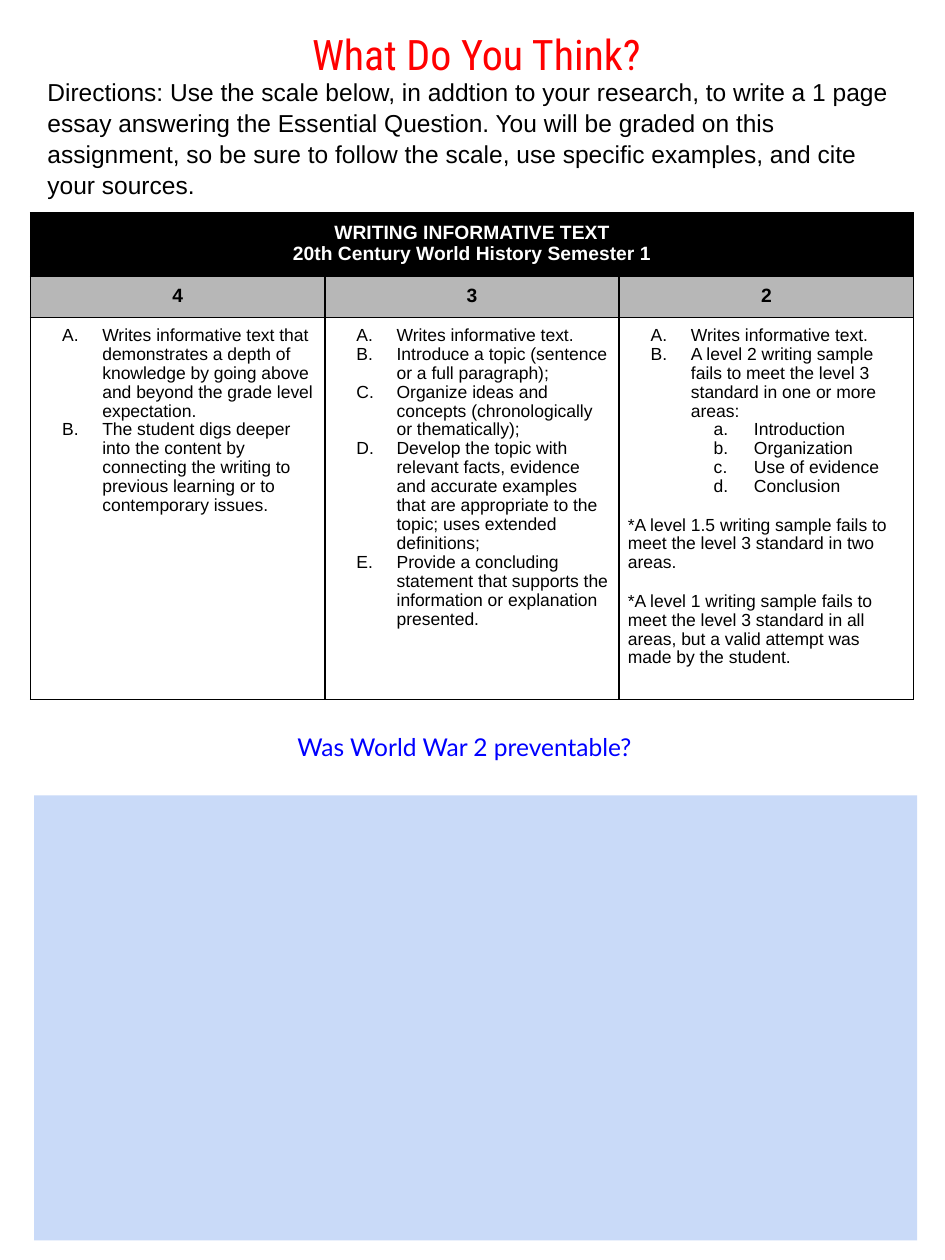
"""Build a one-page essay sheet with a writing scale and an answer area."""
from dataclasses import dataclass

from lxml import etree
from pptx import Presentation
from pptx import util as u
from pptx.dml.color import RGBColor
from pptx.enum import shapes, text
from pptx.oxml import ns


@dataclass(frozen=True)
class Theme:
    black: str = "000000"
    white: str = "FFFFFF"
    red: str = "FF0000"
    blue: str = "0000FF"
    grey: str = "B7B7B7"
    pale: str = "C9DAF8"
    sans: str = "Arial"
    head: str = "Roboto Condensed"
    lato: str = "Lato"
    title: float = 24
    lead: float = 14
    label: float = 11
    body: float = 10


@dataclass(frozen=True)
class Box:
    left: float
    top: float
    width: float
    height: float

    def place(self) -> tuple:
        return tuple(u.Pt(n) for n in (self.left, self.top, self.width, self.height))


@dataclass(frozen=True)
class Item:
    words: str
    level: int = 0


@dataclass(frozen=True)
class Note:
    words: str


@dataclass(frozen=True)
class Grade:
    score: str
    lines: tuple


T = Theme()
GRADES = (
    Grade("4", (
        Item("Writes informative text that demonstrates a depth of knowledge by going "
             "above and beyond the grade level expectation."),
        Item("The student digs deeper into the content by connecting the writing to "
             "previous learning or to contemporary issues."),
    )),
    Grade("3", (
        Item("Writes informative text."),
        Item("Introduce a topic (sentence or a full paragraph);"),
        Item("Organize ideas and concepts (chronologically or thematically);"),
        Item("Develop the topic with relevant facts, evidence and accurate examples "
             "that are appropriate to the topic; uses extended definitions;"),
        Item("Provide a concluding statement that supports the information or "
             "explanation presented."),
    )),
    Grade("2", (
        Item("Writes informative text."),
        Item("A level 2 writing sample fails to meet the level 3 standard in one or "
             "more areas:"),
        Item("Introduction", 1),
        Item("Organization", 1),
        Item("Use of evidence", 1),
        Item("Conclusion", 1),
        Note("*A level 1.5 writing sample fails to meet the level 3 standard in two areas."),
        Note("*A level 1 writing sample fails to meet the level 3 standard in all areas, "
             "but a valid attempt was made by the student."),
    )),
)


def write(frame, words: str, *, size: float, font: str = T.sans, color: str = T.black,
          bold: bool = False, center: bool = False, pitch: float = 1, gap: float = 0):
    first = frame.paragraphs[0]
    para = frame.add_paragraph() if first.runs else first
    para.alignment = text.PP_ALIGN.CENTER if center else text.PP_ALIGN.LEFT
    para.line_spacing = pitch
    para.space_before = u.Pt(gap)
    run = para.add_run()
    run.text = words
    run.font.size = u.Pt(size)
    run.font.name = font
    run.font.bold = bold
    run.font.color.rgb = RGBColor.from_string(color)
    return para


def number(para, level: int) -> None:
    para.level = level
    props = para._p.get_or_add_pPr()
    props.set("marL", str(u.Pt(36 * (level + 1))))
    props.set("indent", str(u.Pt(-23)))
    mark = etree.SubElement(props, ns.qn("a:buAutoNum"))
    mark.set("type", "alphaLcPeriod" if level else "alphaUcPeriod")


def panel(slide, box: Box, inset: float, anchor=text.MSO_ANCHOR.TOP):
    frame = slide.shapes.add_textbox(*box.place()).text_frame
    frame.word_wrap = True
    frame.vertical_anchor = anchor
    frame.margin_top = frame.margin_bottom = u.Pt(inset)
    return frame


def style(cell, fill: str = "") -> None:
    cell.margin_left = cell.margin_right = u.Pt(5)
    cell.margin_top = cell.margin_bottom = u.Pt(5)
    props = cell._tc.get_or_add_tcPr()
    for side in ("lnL", "lnR", "lnT", "lnB"):
        line = etree.SubElement(props, ns.qn("a:" + side), w=str(u.Pt(1)))
        paint = etree.SubElement(line, ns.qn("a:solidFill"))
        etree.SubElement(paint, ns.qn("a:srgbClr"), val=T.black)
    if fill:
        cell.fill.solid()
        cell.fill.fore_color.rgb = RGBColor.from_string(fill)
    else:
        cell.fill.background()


def scale(slide, box: Box, rows: tuple) -> None:
    grid = slide.shapes.add_table(len(rows), len(GRADES), *box.place()).table
    grid.first_row = grid.horz_banding = False
    for row, height in zip(grid.rows, rows):
        row.height = u.Pt(height)
    for col in grid.columns:
        col.width = u.Pt(box.width / len(GRADES))
    for row, fill in enumerate((T.black, T.grey, "")):
        for col in range(len(GRADES)):
            style(grid.cell(row, col), fill)
    top = grid.cell(0, 0)
    top.merge(grid.cell(0, len(GRADES) - 1))
    for words in ("WRITING INFORMATIVE TEXT", "20th Century World History Semester 1"):
        write(top.text_frame, words, size=T.label, color=T.white, bold=True, center=True)
    for col, grade in enumerate(GRADES):
        write(grid.cell(1, col).text_frame, grade.score, size=T.label, bold=True, center=True)
        frame = grid.cell(2, col).text_frame
        for line in grade.lines:
            gap = 11 if isinstance(line, Note) else 0
            para = write(frame, line.words, size=T.body, pitch=0.97, gap=gap)
            if isinstance(line, Item):
                number(para, line.level)


def main() -> None:
    deck = Presentation()
    deck.slide_width, deck.slide_height = u.Pt(540), u.Pt(720)
    slide = deck.slides.add_slide(deck.slide_layouts[6])

    title = panel(slide, Box(31, 10, 482.5, 41), 3.6, text.MSO_ANCHOR.MIDDLE)
    write(title, "What Do You Think?", size=T.title, font=T.head, color=T.red, center=True)

    scale(slide, Box(17.5, 121.7, 504.6, 268), (34.6, 22.3, 211.1))

    lead = panel(slide, Box(20, 36, 505, 78.5), 7.2)
    write(lead, "Directions: Use the scale below, in addtion to your research, to write a "
          "1 page essay answering the Essential Question. You will be graded on this "
          "assignment, so be sure to follow the scale, use specific examples, and cite "
          "your sources.", size=T.lead, pitch=1.05)

    query = panel(slide, Box(17.5, 414.7, 496, 31.7), 3.6)
    write(query, "Was World War 2 preventable?", size=T.lead, font=T.lato, color=T.blue,
          center=True)

    area = slide.shapes.add_shape(shapes.MSO_SHAPE.RECTANGLE,
                                  *Box(19.5, 454.5, 504.6, 254.3).place())
    area.shadow.inherit = False
    area.fill.solid()
    area.fill.fore_color.rgb = RGBColor.from_string(T.pale)
    area.line.fill.background()

    deck.save("out.pptx")


if __name__ == "__main__":
    main()
